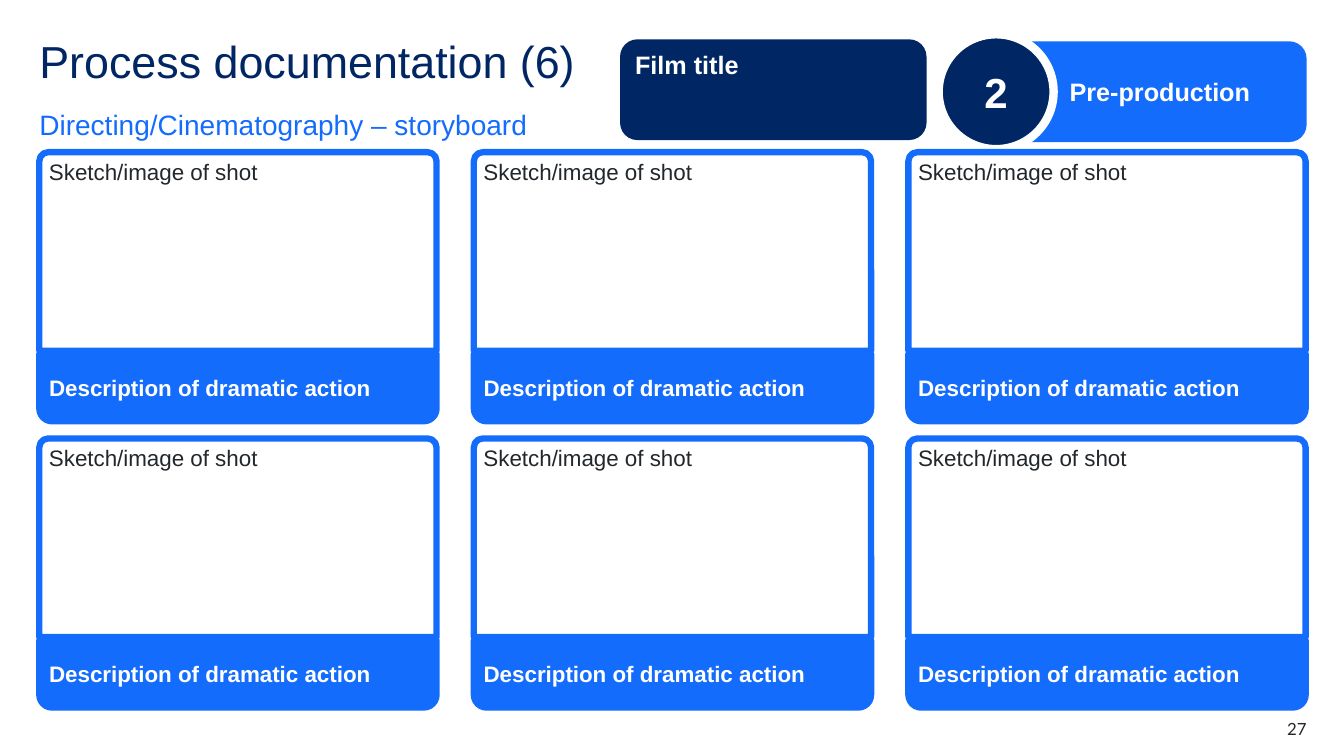
from pptx import Presentation
from pptx.dml.color import RGBColor
from pptx.enum.shapes import MSO_SHAPE
from pptx.enum.text import MSO_ANCHOR, MSO_AUTO_SIZE, PP_ALIGN
from pptx.oxml.xmlchemy import OxmlElement
from pptx.util import Inches, Pt

NAVY = RGBColor(0x00, 0x26, 0x64)
BLUE = RGBColor(0x14, 0x6C, 0xFD)
DARK = RGBColor(0x22, 0x27, 0x2B)
WHITE = RGBColor(0xFF, 0xFF, 0xFF)


def write(shape, text, size, color, bold=False, align=PP_ALIGN.LEFT,
          anchor=MSO_ANCHOR.TOP, margins=(0.1, 0.05, 0.1, 0.05), face="Arial"):
    frame = shape.text_frame
    frame.text = text
    frame.word_wrap = True
    frame.auto_size = MSO_AUTO_SIZE.NONE
    frame.vertical_anchor = anchor
    frame.margin_left, frame.margin_top, frame.margin_right, frame.margin_bottom = map(Inches, margins)
    para = frame.paragraphs[0]
    para.alignment = align
    font = para.runs[0].font
    font.name, font.size, font.bold = face, Pt(size), bold
    font.color.rgb = color
    return para


def draw(kind, box, fill, line=None, width=0, adjust=()):
    shape = slide.shapes.add_shape(kind, *map(Inches, box))
    shape.shadow.inherit = False
    if fill is None:
        shape.fill.background()
    else:
        shape.fill.solid()
        shape.fill.fore_color.rgb = fill
    if line is None:
        shape.line.fill.background()
    else:
        shape.line.color.rgb = line
        shape.line.width = Pt(width)
    for index, value in enumerate(adjust):
        shape.adjustments[index] = value
    return shape


deck = Presentation()
deck.slide_width, deck.slide_height = Inches(13.33), Inches(7.5)
slide = deck.slides.add_slide(deck.slide_layouts[1])
flush = (0, 0, 0, 0)
middle = MSO_ANCHOR.MIDDLE

title = slide.shapes.title
title.left, title.top, title.width, title.height = map(Inches, (0.39, 0.39, 5.67, 0.6))
para = write(title, "Process documentation (6)", 32, NAVY, margins=flush)
para.line_spacing = 0.9

body = slide.placeholders[1]
body.left, body.top, body.width, body.height = map(Inches, (0.39, 0.98, 5.67, 0.34))
para = write(body, "Directing/Cinematography – storyboard", 20, BLUE, anchor=middle, margins=flush)
para.line_spacing = 1.5
para.space_before, para.space_after = Pt(0), Pt(12)
props = para._p.get_or_add_pPr()
props.set("marL", "0")
props.set("indent", "0")
props.append(OxmlElement("a:buNone"))

film = draw(MSO_SHAPE.ROUNDED_RECTANGLE, (6.15, 0.39, 3.04, 1), NAVY, adjust=[0.173])
write(film, "Film title", 18, WHITE, bold=True)

phase = draw(MSO_SHAPE.ROUNDED_RECTANGLE, (10.06, 0.41, 2.9, 1), BLUE, adjust=[0.173])
para = write(phase, "Pre-production", 18, WHITE, bold=True, anchor=middle)
para._p.get_or_add_pPr().set("marL", str(Inches(0.4)))

badge = draw(MSO_SHAPE.OVAL, (9.31, 0.34, 1.14, 1.14), NAVY, WHITE, 6)
write(badge, "2", 30, WHITE, bold=True, align=PP_ALIGN.CENTER, anchor=middle)

for row in range(2):
    for col in range(3):
        left = 0.39 + col * 4.31
        top = 1.51 + row * 2.84
        sketch = draw(MSO_SHAPE.ROUND_2_SAME_RECTANGLE, (left, top, 3.94, 1.97),
                      None, BLUE, 4.5, [0.045, 0])
        write(sketch, "Sketch/image of shot", 16, DARK, margins=(0.07, 0.03, 0.07, 0.05))
        action = draw(MSO_SHAPE.ROUND_2_SAME_RECTANGLE, (left, top + 2, 3.94, 0.67),
                      BLUE, BLUE, 4.5, [0, 0.19])
        write(action, "Description of dramatic action", 16, WHITE, bold=True,
              anchor=middle, margins=(0.06, 0.05, 0.06, 0.01))

number = slide.shapes.add_textbox(*map(Inches, (12.17, 7.13, 0.79, 0.2)))
write(number, "27", 12, DARK, align=PP_ALIGN.RIGHT, margins=flush, face="Lato")

deck.save("out.pptx")
